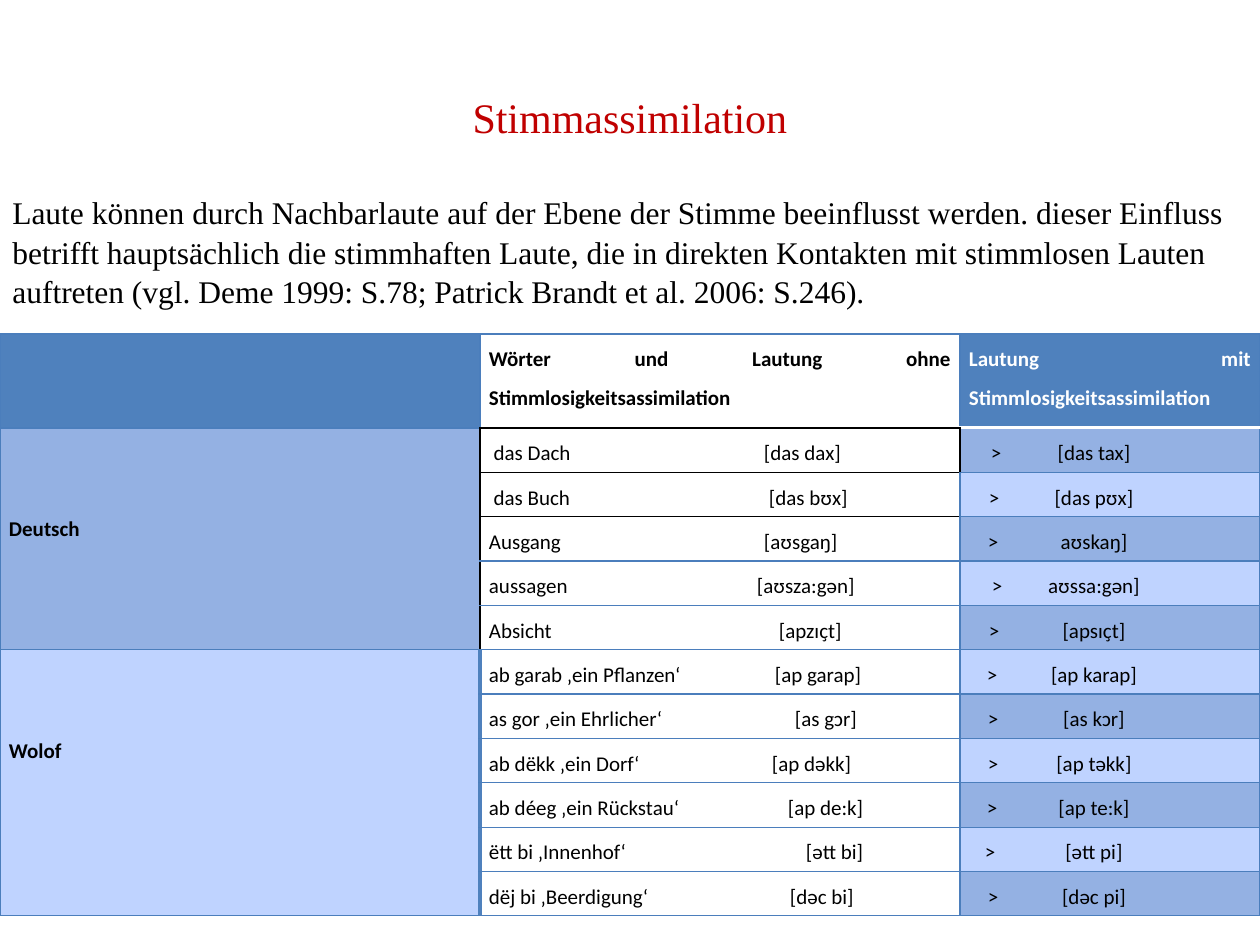
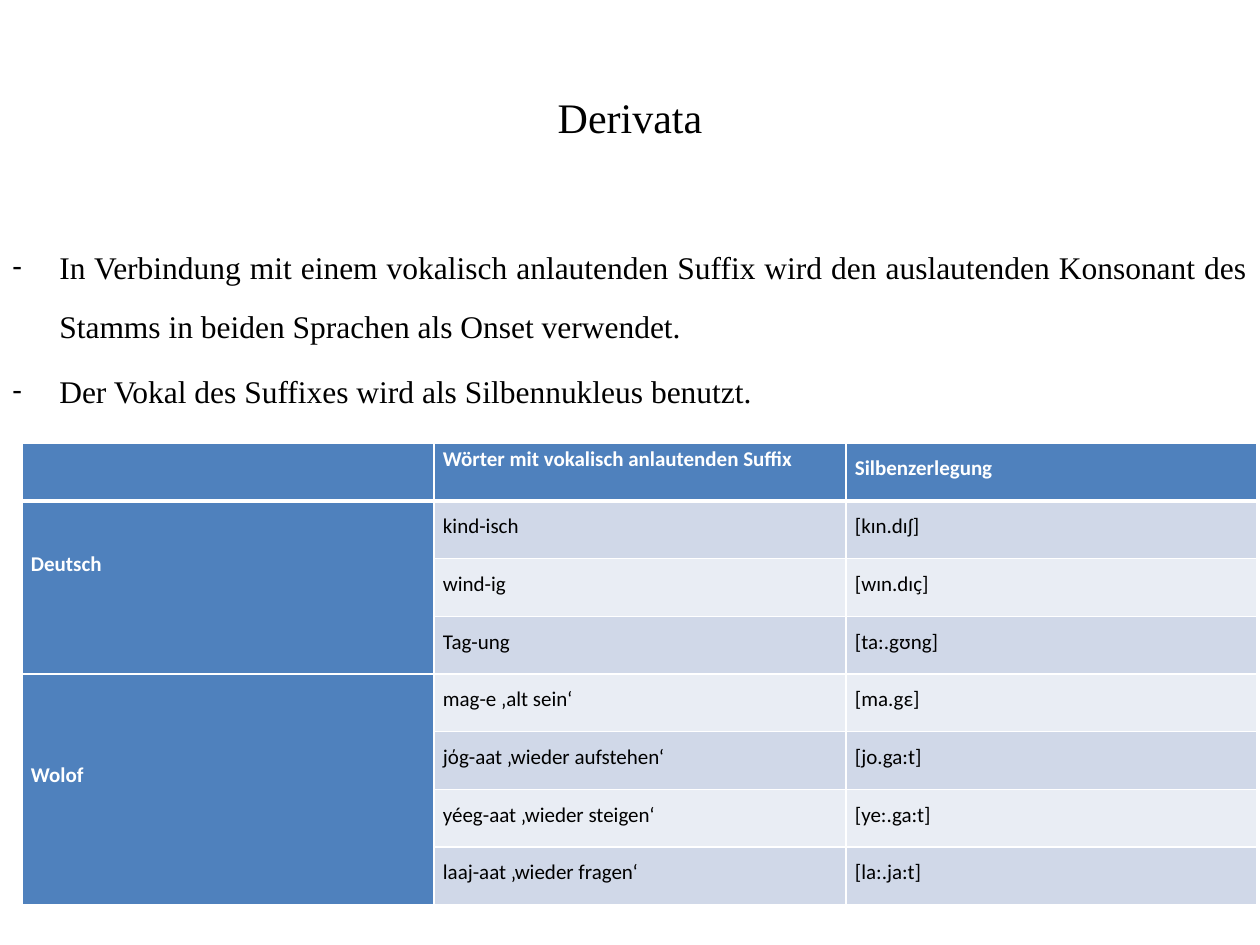
from dataclasses import dataclass

from lxml.etree import SubElement
from pptx import Presentation
from pptx.dml.color import RGBColor
from pptx.enum.text import MSO_ANCHOR, PP_ALIGN
from pptx.oxml.ns import qn
from pptx.util import Emu, Pt

PIXELS_PER_INCH = 126
TITLE_ONLY = 5
LABEL_LINE = 38
OPPOSITE = {"L": ("R", 0, -1), "R": ("L", 0, 1), "T": ("B", -1, 0), "B": ("T", 1, 0)}


@dataclass(frozen=True)
class Theme:
    """Colours, fonts and type sizes shared by the slides."""
    serif: str = "Times New Roman"
    sans: str = "Calibri"
    title_size: int = 24
    body_size: int = 18
    cell_size: int = 12
    black: str = "000000"
    white: str = "FFFFFF"
    red: str = "C00000"
    blue: str = "4F81BD"
    rule: str = "4B7EBC"
    deep_band: str = "94B1E3"
    light_band: str = "BFD3FF"
    gray_band: str = "D0D8E8"
    pale_band: str = "E9EDF4"


THEME = Theme()


def px(length):
    """Turn px into EMU."""
    return Emu(round(length * 914400 / PIXELS_PER_INCH))


def write(frame, text, font=THEME.sans, size=THEME.cell_size, color=THEME.black, bold=False,
          align=PP_ALIGN.LEFT, line_spacing=1.5, space_after=0, bullet=None, indent=0, tabs=()):
    """Fill a text frame, one paragraph for each line of the text."""
    for number, line in enumerate(text.split("\n")):
        paragraph = frame.add_paragraph() if number else frame.paragraphs[0]
        paragraph.alignment = align
        paragraph.line_spacing = line_spacing
        paragraph.space_before = Pt(0)
        paragraph.space_after = Pt(space_after)
        run = paragraph.add_run()
        run.text = line
        run.font.name = font
        run.font.size = Pt(size)
        run.font.bold = bold
        run.font.color.rgb = RGBColor.from_string(color)
        properties = paragraph._p.get_or_add_pPr()
        if bullet:
            properties.set("marL", str(px(indent)))
            properties.set("indent", str(-px(indent)))
            SubElement(properties, qn("a:buFont"), typeface=THEME.sans)
            SubElement(properties, qn("a:buChar"), char=bullet)
        if tabs:
            stops = SubElement(properties, qn("a:tabLst"))
            for position, kind in tabs:
                SubElement(stops, qn("a:tab"), pos=str(px(position)), algn=kind)


@dataclass
class Cell:
    """Wording, fill and text format of one table cell."""
    text: str
    fill: str
    format: dict
    top: int = 0
    span: int = 1


class Deck:
    """Holds the style and the current slide."""

    def __init__(self, theme):
        self.theme = theme
        self.presentation = Presentation()
        self.presentation.slide_width = px(1260)
        self.presentation.slide_height = px(945)
        self.slide = None

    def title_slide(self, text, color):
        """Start a slide with a centred title."""
        layout = self.presentation.slide_layouts[TITLE_ONLY]
        self.slide = self.presentation.slides.add_slide(layout)
        title = self.slide.shapes.title
        title.left, title.top, title.width, title.height = map(px, (63, 38, 1134, 157))
        title.text_frame.vertical_anchor = MSO_ANCHOR.MIDDLE
        write(title.text_frame, text, font=self.theme.serif, size=self.theme.title_size,
              color=color, align=PP_ALIGN.CENTER, line_spacing=1)

    def body(self, text, top, height, **text_format):
        """Add a full-width text box."""
        shape = self.slide.shapes.add_textbox(0, px(top), px(1260), px(height))
        shape.text_frame.word_wrap = True
        write(shape.text_frame, text, font=self.theme.serif, size=self.theme.body_size,
              **text_format)

    def table(self, left, top, widths, header, height, rows, border, special):
        """Add a table; special maps (row, column, side) to its own border."""
        shape = self.slide.shapes.add_table(len(rows), len(widths), px(left), px(top),
                                            px(sum(widths)), px(height))
        table = shape.table
        table.first_row = table.horz_banding = False
        for column, width in enumerate(widths):
            table.columns[column].width = px(width)
        for number, row in enumerate(table.rows):
            row.height = px(header) if number == 0 else px(height - header) // (len(rows) - 1)
        lines = dict(special)
        for (row, column, side), line in special.items():
            mirrored, down, across = OPPOSITE[side]
            lines[row + down, column + across, mirrored] = line
        for row, contents in enumerate(rows):
            for column, content in enumerate(contents):
                cell = table.cell(row, column)
                for side in "LRTB":
                    self.border(cell, side, *lines.get((row, column, side), border))
                if content:
                    self.cell(cell, content)
                    if content.span > 1:
                        cell.merge(table.cell(row + content.span - 1, column))

    def border(self, cell, side, color, width):
        """Draw one side of a table cell."""
        properties = cell._tc.get_or_add_tcPr()
        line = SubElement(properties, qn(f"a:ln{side}"), w=str(Pt(width)))
        SubElement(SubElement(line, qn("a:solidFill")), qn("a:srgbClr"), val=color)

    def cell(self, cell, content):
        """Fill a table cell and set its text."""
        cell.margin_left = cell.margin_right = px(9)
        cell.margin_top, cell.margin_bottom = px(content.top), 0
        cell.fill.solid()
        cell.fill.fore_color.rgb = RGBColor.from_string(content.fill)
        if content.text:
            write(cell.text_frame, content.text, **content.format)


def header_cell(text, fill, color, line_spacing=1.5):
    """Describe a bold, justified heading cell."""
    return Cell(text, fill, dict(color=color, bold=True, align=PP_ALIGN.JUSTIFY,
                                 line_spacing=line_spacing))


def label_cell(text, fill, color, lines, span):
    """Describe a language label, set down by a number of lines."""
    return Cell(text, fill, dict(color=color, bold=True), lines * LABEL_LINE, span)


def voice_assimilation(deck):
    """Build the slide on voice assimilation."""
    theme = deck.theme
    deck.title_slide("Stimmassimilation", theme.red)
    deck.body("Laute können durch Nachbarlaute auf der Ebene der Stimme beeinflusst werden. "
              "dieser Einfluss betrifft hauptsächlich die stimmhaften Laute, die in direkten "
              "Kontakten mit stimmlosen Lauten auftreten (vgl. Deme 1999: S.78; Patrick Brandt "
              "et al. 2006: S.246).", 185, 140, line_spacing=1.05)
    languages = {
        "Deutsch": (theme.deep_band, [
            (" das Dach", 275, "[das dax]", 22, "[das tax]"),
            (" das Buch", 280, "[das bʊx]", 20, "[das pʊx]"),
            ("Ausgang", 275, "[aʊsgaŋ]", 19, "aʊskaŋ]"),
            ("aussagen", 268, "[aʊsza:gәn]", 23, "aʊssa:gәn]"),
            ("Absicht", 290, "[apzɪҫt]", 20, "[apsɪҫt]"),
        ]),
        "Wolof": (theme.light_band, [
            ("ab garab ‚ein Pflanzen‘", 286, "[ap garap]", 18, "[ap karap]"),
            ("as gor ‚ein Ehrlicher‘", 306, "[as gↄr]", 19, "[as kↄr]"),
            ("ab dëkk ‚ein Dorf‘", 283, "[ap dәkk]", 19, "[ap tәkk]"),
            ("ab déeg ‚ein Rückstau‘", 299, "[ap de:k]", 18, "[ap te:k]"),
            ("ëtt bi ‚Innenhof‘", 317, "[әtt bi]", 16, "[әtt pi]"),
            ("dëj bi ‚Beerdigung‘", 301, "[dәc bi]", 19, "[dәc pi]"),
        ]),
    }
    rows = [[
        header_cell("", theme.blue, theme.white),
        header_cell("Wörter und Lautung ohne Stimmlosigkeitsassimilation",
                    theme.white, theme.black),
        header_cell("Lautung mit Stimmlosigkeitsassimilation", theme.blue, theme.white),
    ]]
    for language, (fill, words) in languages.items():
        for number, (word, sound_tab, sound, arrow_tab, assimilated) in enumerate(words):
            band = theme.deep_band if len(rows) % 2 else theme.light_band
            label = None if number else label_cell(language, fill, theme.black, 2, len(words))
            rows.append([
                label,
                Cell(f"{word}\t{sound}", theme.white, dict(tabs=[(sound_tab, "l")])),
                Cell(f"\t˃\t{assimilated}", band,
                     dict(tabs=[(arrow_tab, "l"), (125, "ctr")])),
            ])
    black_line = (theme.black, 1)
    special = {(row, 1, "B"): black_line for row in range(3)}
    special |= {(row, 0, "R"): black_line if row < 6 else (theme.blue, 2)
                for row in range(1, len(rows))}
    special |= {(1, 1, "R"): black_line, (0, 2, "B"): (theme.white, 2)}
    deck.table(0, 334, (480, 480, 300), 94, 582, rows, (theme.rule, 0.75), special)


def derivatives(deck):
    """Build the slide on derived words."""
    theme = deck.theme
    deck.title_slide("Derivata", theme.black)
    deck.body("In Verbindung mit einem vokalisch anlautenden Suffix wird den auslautenden "
              "Konsonant des Stamms in beiden Sprachen als Onset verwendet.\n"
              "Der Vokal des Suffixes wird als Silbennukleus benutzt.", 221, 210,
              align=PP_ALIGN.JUSTIFY, line_spacing=1.55, space_after=4, bullet="-", indent=47)
    languages = {
        "Deutsch": (1, [
            ("kind-isch", "[kɪn.dɪʃ]"),
            ("wind-ig", "[wɪn.dɪҫ]"),
            ("Tag-ung", "[ta:.gʊng]"),
        ]),
        "Wolof": (2, [
            ("mag-e ‚alt sein‘", "[ma.gε]"),
            ("jόg-aat ‚wieder aufstehen‘", "[jo.ga:t]"),
            ("yéeg-aat ‚wieder steigen‘", "[ye:.ga:t]"),
            ("laaj-aat ‚wieder fragen‘", "[la:.ja:t]"),
        ]),
    }
    rows = [[
        header_cell("", theme.blue, theme.white),
        header_cell("Wörter mit vokalisch anlautenden Suffix", theme.blue, theme.white, 1.15),
        header_cell("Silbenzerlegung", theme.blue, theme.white),
    ]]
    for language, (lines, words) in languages.items():
        for number, texts in enumerate(words):
            band = theme.gray_band if len(rows) % 2 else theme.pale_band
            label = None if number else label_cell(language, theme.blue, theme.white,
                                                   lines, len(words))
            rows.append([label] + [Cell(text, band, {}) for text in texts])
    special = {(0, column, "B"): (theme.white, 3) for column in range(3)}
    deck.table(22, 443, (412, 412, 411), 58, 462, rows, (theme.white, 1), special)


def main():
    """Build and save the presentation."""
    deck = Deck(THEME)
    voice_assimilation(deck)
    derivatives(deck)
    deck.presentation.save("out.pptx")


if __name__ == "__main__":
    main()
